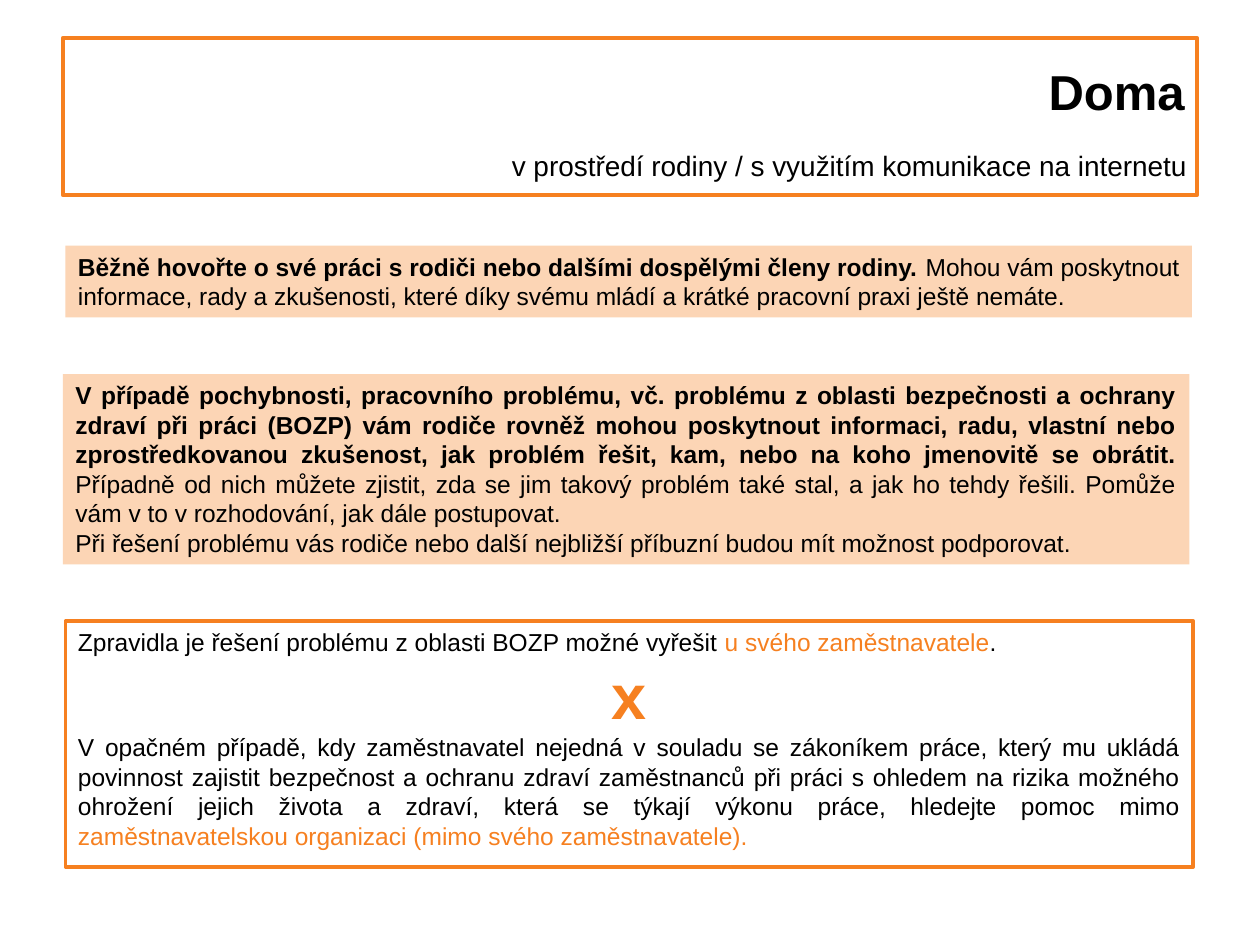
from pptx import Presentation
from pptx.dml.color import RGBColor
from pptx.enum import shapes, text
from pptx.util import Inches, Pt

BLACK = RGBColor(0x00, 0x00, 0x00)
WHITE = RGBColor(0xFF, 0xFF, 0xFF)
ORANGE = RGBColor(0xF6, 0x80, 0x20)
PEACH = RGBColor(0xFC, 0xD5, 0xB5)

LEFT = text.PP_ALIGN.LEFT
CENTER = text.PP_ALIGN.CENTER
RIGHT = text.PP_ALIGN.RIGHT
JUSTIFY = text.PP_ALIGN.JUSTIFY


def add_box(slide, box, fill, line=None):
    sp = slide.shapes.add_shape(shapes.MSO_SHAPE.RECTANGLE, *map(Inches, box))
    sp.shadow.inherit = False
    sp.fill.solid()
    sp.fill.fore_color.rgb = fill
    if line is None:
        sp.line.fill.background()
    else:
        sp.line.color.rgb = line
        sp.line.width = Pt(2.25)
    tf = sp.text_frame
    tf.word_wrap = True
    tf.vertical_anchor = text.MSO_ANCHOR.TOP
    return tf


def write(p, runs, align=JUSTIFY, size=14):
    p.alignment = align
    p.font.name = "Arial"
    p.font.size = Pt(size)
    for content, color, bold in runs:
        r = p.add_run()
        r.text = content
        r.font.color.rgb = color
        r.font.bold = bold


def add_header(slide, box, title, subtitle):
    left, top, width, height = box
    tf = add_box(slide, box, WHITE, ORANGE)
    tf.margin_top = Inches(0.19)
    write(tf.paragraphs[0], [(title, BLACK, True)], RIGHT, 28)

    sub_width, sub_height = 7.9, 0.37
    sub_left = left + width - sub_width + 0.02
    sub_top = top + height - sub_height - 0.05
    sp = slide.shapes.add_textbox(
        *map(Inches, (sub_left, sub_top, sub_width, sub_height)))
    sp.text_frame.word_wrap = True
    write(sp.text_frame.paragraphs[0], [(subtitle, BLACK, False)], RIGHT, 16)


def add_advice(slide, box, lead, detail, closing=None):
    tf = add_box(slide, box, PEACH)
    write(tf.paragraphs[0], [(lead, BLACK, True), (detail, BLACK, False)])
    if closing:
        write(tf.add_paragraph(), [(closing, BLACK, False)])


def add_alternatives(slide, box, first, mark, second):
    tf = add_box(slide, box, WHITE, ORANGE)
    write(tf.paragraphs[0], first)
    write(tf.add_paragraph(), [(mark, ORANGE, True)], CENTER, 36)
    write(tf.add_paragraph(), second)


def main():
    prs = Presentation()
    prs.slide_width = Inches(10)
    prs.slide_height = Inches(7.5)
    slide = prs.slides.add_slide(prs.slide_layouts[6])

    add_header(
        slide, (0.5, 0.3, 9, 1.25), "Doma",
        "v prostředí rodiny / s využitím komunikace na internetu")
    add_advice(
        slide, (0.52, 1.95, 8.94, 0.57),
        "Běžně hovořte o své práci s rodiči nebo dalšími dospělými členy "
        "rodiny. ",
        "Mohou vám poskytnout informace, rady a zkušenosti, které díky svému "
        "mládí a krátké pracovní praxi ještě nemáte.")
    add_advice(
        slide, (0.5, 2.97, 8.94, 1.51),
        "V případě pochybnosti, pracovního problému, vč. problému z oblasti "
        "bezpečnosti a ochrany zdraví při práci (BOZP) vám rodiče rovněž mohou "
        "poskytnout informaci, radu, vlastní nebo zprostředkovanou zkušenost, "
        "jak problém řešit, kam, nebo na koho jmenovitě se obrátit. ",
        "Případně od nich můžete zjistit, zda se jim takový problém také stal, "
        "a jak ho tehdy řešili. Pomůže vám v to v rozhodování, jak dále "
        "postupovat. ",
        "Při řešení problému vás rodiče nebo další nejbližší příbuzní budou "
        "mít možnost podporovat.")
    add_alternatives(
        slide, (0.52, 4.93, 8.95, 1.95),
        [("Zpravidla je řešení problému z oblasti BOZP možné vyřešit ",
          BLACK, False),
         ("u svého zaměstnavatele", ORANGE, False),
         (".", BLACK, False)],
        "x",
        [("V opačném případě, kdy zaměstnavatel nejedná v souladu se zákoníkem "
          "práce, který mu ukládá povinnost zajistit bezpečnost a ochranu "
          "zdraví zaměstnanců při práci s ohledem na rizika možného ohrožení "
          "jejich života a zdraví, která se týkají výkonu práce, hledejte "
          "pomoc mimo ", BLACK, False),
         ("zaměstnavatelskou organizaci (mimo svého zaměstnavatele).",
          ORANGE, False)])

    prs.save("out.pptx")


if __name__ == "__main__":
    main()
